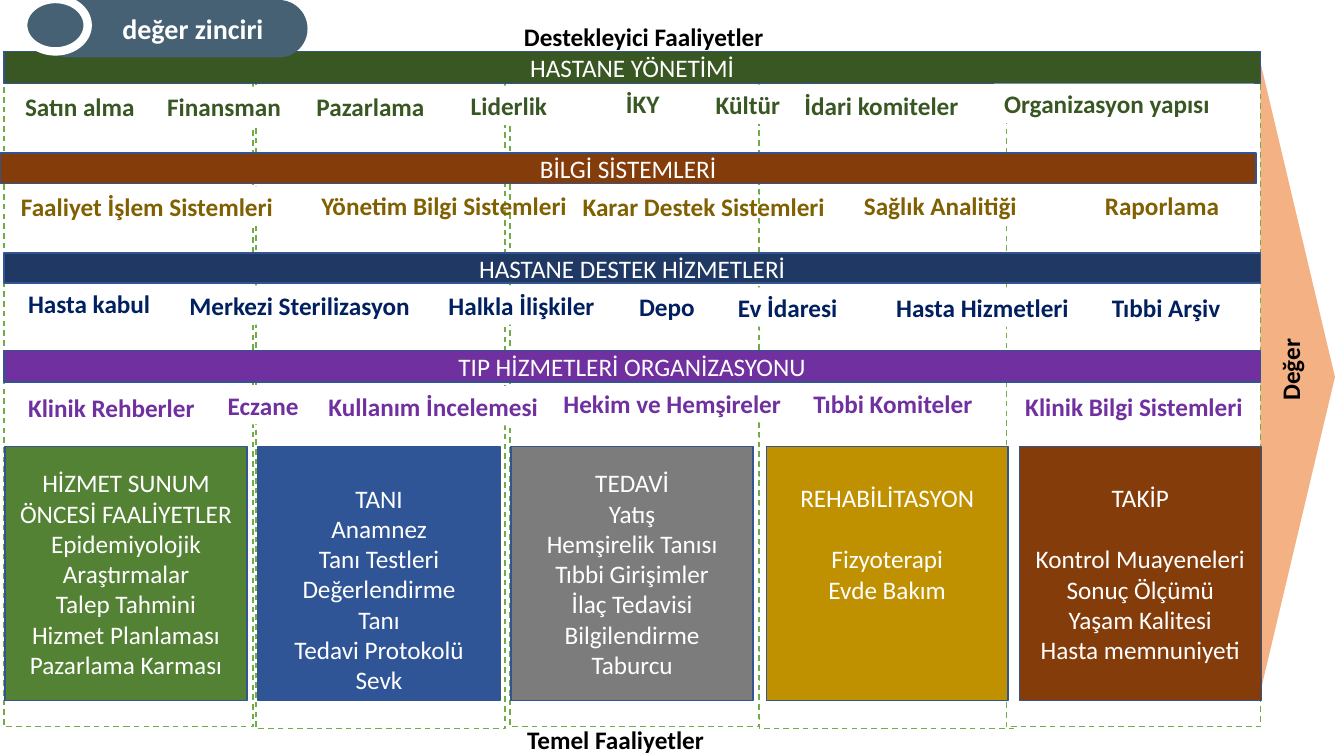
from pptx import Presentation
from pptx.dml.color import RGBColor
from pptx.enum.dml import MSO_LINE
from pptx.enum.shapes import MSO_SHAPE as SHAPE
from pptx.enum.text import MSO_ANCHOR as ANCHOR, PP_ALIGN as ALIGN
from pptx.util import Inches, Pt

COLORS = {
    "white": "FFFFFF", "black": "000000", "border": "325491", "dash": "70AD47",
    "arrow": "F4B183", "slate": "456173", "forest": "385723", "brown": "843C0B",
    "navy": "203864", "purple": "7030A0", "olive": "806000", "ink": "002060",
    "green": "548235", "blue": "2F5597", "gray": "7C7C7C", "gold": "BF9000",
}
LINE_HEIGHT = 0.3
BAND_LEFT, BAND_WIDTH = 0.04, 12.46
LABEL_HEIGHT = 0.39

# Dashed column frames, back to front: left, top, width
FRAMES = [(7.53, 0.53, 2.52), (9.98, 0.51, 2.52), (5.06, 0.51, 2.47),
          (2.54, 0.53, 2.47), (0.04, 0.51, 2.47)]

# Primary activities: left, fill, paragraphs, gap after heading, lines free above, below
ACTIVITIES = [
    (0.05, "green", ["HİZMET SUNUM ÖNCESİ FAALİYETLER", "Epidemiyolojik Araştırmalar",
                     "Talep Tahmini", "Hizmet Planlaması", "Pazarlama Karması"], 0, 0, 0),
    (2.56, "blue", ["TANI", "Anamnez", "Tanı Testleri", "Değerlendirme", "Tanı",
                    "Tedavi Protokolü", "Sevk"], 0, 1, 0),
    (5.07, "gray", ["TEDAVİ", "Yatış", "Hemşirelik Tanısı", "Tıbbi Girişimler",
                    "İlaç Tedavisi", "Bilgilendirme", "Taburcu"], 0, 0, 0),
    (7.6, "gold", ["REHABİLİTASYON", "Fizyoterapi", "Evde Bakım"], 22, 0, 2),
    (10.11, "brown", ["TAKİP", "Kontrol Muayeneleri", "Sonuç Ölçümü", "Yaşam Kalitesi",
                      "Hasta memnuniyeti"], 22, 0, 0),
]

# Support bands: title, left, top, height, fill, label colour,
# labels (text, left, top, width, fill)
BANDS = [
    ("HASTANE YÖNETİMİ", BAND_LEFT, 0.51, 0.32, "forest", "forest", [
        ("Satın alma", 0.15, 0.86, 1.42, None),
        ("Finansman", 1.56, 0.86, 1.42, "white"),
        ("Pazarlama", 3.04, 0.86, 1.42, None),
        ("Liderlik", 4.57, 0.85, 1.42, "white"),
        ("İKY", 6.11, 0.83, 0.77, None),
        ("Kültür", 7, 0.84, 0.9, "white"),
        ("İdari komiteler", 7.88, 0.85, 2.4, None),
        ("Organizasyon yapısı", 9.86, 0.83, 2.58, "white")]),
    ("BİLGİ SİSTEMLERİ", 0, 1.52, 0.3, "brown", "olive", [
        ("Faaliyet İşlem Sistemleri", 0.11, 1.85, 3.03, "white"),
        ("Yönetim Bilgi Sistemleri", 3.09, 1.84, 2.9, None),
        ("Karar Destek Sistemleri", 5.68, 1.85, 2.85, None),
        ("Sağlık Analitiği", 8.47, 1.84, 2.4, "white"),
        ("Raporlama", 10.86, 1.84, 1.44, None)]),
    ("HASTANE DESTEK HİZMETLERİ", BAND_LEFT, 2.51, 0.3, "navy", "ink", [
        ("Hasta kabul", 0.18, 2.81, 1.57, None),
        ("Merkezi Sterilizasyon", 1.78, 2.83, 2.72, "white"),
        ("Halkla İlişkiler", 4.35, 2.83, 1.76, "white"),
        ("Depo", 6.24, 2.84, 0.85, None),
        ("Ev İdaresi", 7.22, 2.85, 1.61, "white"),
        ("Hasta Hizmetleri", 8.79, 2.85, 2.07, "white"),
        ("Tıbbi Arşiv", 10.93, 2.85, 1.38, None)]),
    ("TIP HİZMETLERİ ORGANİZASYONU", BAND_LEFT, 3.48, 0.31, "purple", "purple", [
        ("Klinik Rehberler", 0.18, 3.84, 2.4, None),
        ("Eczane", 2.16, 3.82, 1.32, "white"),
        ("Kullanım İncelemesi", 3.16, 3.83, 2.4, "white"),
        ("Hekim ve Hemşireler", 5.49, 3.8, 2.56, "white"),
        ("Tıbbi Komiteler", 7.97, 3.8, 2.4, None),
        ("Klinik Bilgi Sistemleri", 10.07, 3.83, 2.52, None)]),
]


def color(name):
    return RGBColor.from_string(COLORS[name])


def add_block(page, kind, place, fill, line=None, width=1):
    """Add a preset shape at (left, top, width, height) in inches."""
    block = page.shapes.add_shape(kind, *map(Inches, place))
    block.shadow.inherit = False
    block.fill.solid()
    block.fill.fore_color.rgb = color(fill)
    if line:
        block.line.color.rgb = color(line)
        block.line.width = Pt(width)
    else:
        block.line.fill.background()
    return block


def write(box, lines, ink="white", size=18, bold=False, align=ALIGN.CENTER,
          anchor=ANCHOR.MIDDLE):
    frame = box.text_frame
    frame.word_wrap = True
    frame.vertical_anchor = anchor
    for index, line in enumerate(lines):
        para = frame.paragraphs[0] if index == 0 else frame.add_paragraph()
        para.alignment = align
        span = para.add_run()
        span.text = line
        span.font.name = "Calibri"
        span.font.size = Pt(size)
        span.font.bold = bold
        span.font.color.rgb = color(ink)
    return frame


def add_label(page, text, left, top, width, fill=None, ink="black", align=ALIGN.LEFT):
    box = page.shapes.add_textbox(*map(Inches, (left, top, width, LABEL_HEIGHT)))
    if fill:
        box.fill.solid()
        box.fill.fore_color.rgb = color(fill)
    write(box, [text], ink, bold=True, align=align, anchor=ANCHOR.TOP)
    return box


def add_activity(page, left, fill, lines, gap, above, below):
    block = add_block(page, SHAPE.RECTANGLE, (left, 4.43, 2.4, 2.52), fill, "border")
    frame = write(block, lines)
    frame.margin_top = Inches(0.05 + above * LINE_HEIGHT)
    frame.margin_bottom = Inches(0.05 + below * LINE_HEIGHT)
    frame.paragraphs[0].space_after = Pt(gap)


def add_band(page, title, left, top, height, fill, ink, labels):
    place = (left, top, BAND_WIDTH, height)
    write(add_block(page, SHAPE.RECTANGLE, place, fill, "border"), [title])
    for label in labels:
        add_label(page, *label, ink=ink)


def add_title(page):
    pill = add_block(page, SHAPE.ROUNDED_RECTANGLE, (0.4, 0, 2.65, 0.57), "slate")
    pill.adjustments[0] = 0.5
    frame = write(pill, ["değer zinciri"], size=20, bold=True, align=ALIGN.LEFT)
    frame.margin_left = Inches(0.73)
    add_block(page, SHAPE.OVAL, (0.23, -0.01, 0.64, 0.52), "slate", "white", 6)


def main():
    deck = Presentation()
    deck.slide_width, deck.slide_height = Inches(13.33), Inches(7.5)
    page = deck.slides.add_slide(deck.slide_layouts[6])

    add_block(page, SHAPE.PENTAGON, (11.72, 0.53, 1.52, 6.42), "arrow")
    for left, top, width in FRAMES:
        frame = add_block(page, SHAPE.RECTANGLE, (left, top, width, 6.7), "white", "dash")
        frame.line.dash_style = MSO_LINE.DASH
    for activity in ACTIVITIES:
        add_activity(page, *activity)
    for band in BANDS:
        add_band(page, *band)

    add_label(page, "Değer", 12.3, 3.39, 0.98).rotation = 270
    add_label(page, "Temel Faaliyetler", 2.68, 7.14, 6.85, align=ALIGN.CENTER)
    add_label(page, "Destekleyici Faaliyetler", 2.96, 0.16, 6.85, align=ALIGN.CENTER)
    add_title(page)
    deck.save("out.pptx")


if __name__ == "__main__":
    main()
